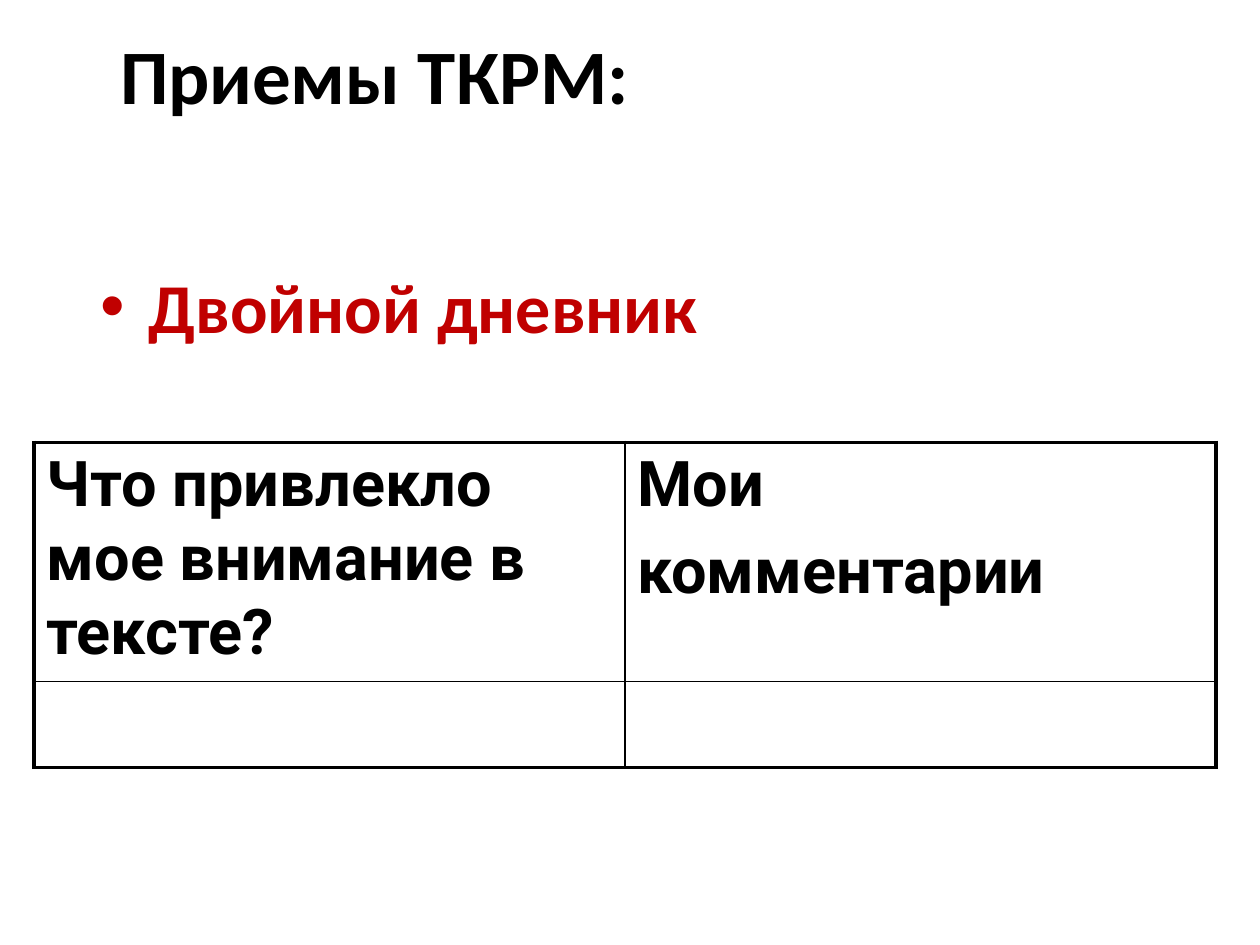
from lxml import etree
from pptx import Presentation
from pptx.dml.color import RGBColor
from pptx.enum.text import MSO_ANCHOR, PP_ALIGN
from pptx.oxml.ns import qn
from pptx.util import Inches, Pt


def add_run(para, text, size, font, color="000000"):
    span = para.add_run()
    span.text = text
    span.font.size = Pt(size)
    span.font.name = font
    span.font.bold = True
    span.font.color.rgb = RGBColor.from_string(color)


def set_borders(cell, widths):
    """Draw black left, right, top and bottom borders, widths in points."""
    props = cell._tc.get_or_add_tcPr()
    for index, (side, width) in enumerate(zip("LRTB", widths)):
        line = etree.Element(qn(f"a:ln{side}"), w=str(Pt(width)))
        fill = etree.SubElement(line, qn("a:solidFill"))
        etree.SubElement(fill, qn("a:srgbClr"), val="000000")
        props.insert(index, line)


deck = Presentation()
deck.slide_width, deck.slide_height = Inches(10), Inches(7.5)
page = deck.slides.add_slide(deck.slide_layouts[5])

# Title
title = page.shapes.title
title.left, title.top = Inches(-0.23), Inches(0)
title.width, title.height = Inches(6.41), Inches(1.17)
title.text_frame.vertical_anchor = MSO_ANCHOR.MIDDLE
para = title.text_frame.paragraphs[0]
para.alignment = PP_ALIGN.CENTER
add_run(para, "Приемы ТКРМ:", 44, "Calibri")

# Name of the technique
box = page.shapes.add_textbox(Inches(0.7), Inches(1.64), Inches(7.99), Inches(1.34))
frame = box.text_frame
frame.word_wrap = True
frame.margin_top = Inches(0.58)
para = frame.paragraphs[0]
props = para._p.get_or_add_pPr()
props.set("marL", str(Inches(0.38)))
props.set("indent", str(Inches(-0.38)))
etree.SubElement(props, qn("a:buFont"), typeface="Arial")
etree.SubElement(props, qn("a:buChar"), char="•")
para.line_spacing = 0.8
add_run(para, "Двойной дневник", 40, "Calibri", "C00000")

# Double diary
rows = [
    [["Что привлекло мое внимание в тексте?"], ["Мои", "комментарии"]],
    [[], []],
]
row_heights = [1.86, 0.68]
column_width = 4.69
outer, inner = 2.25, 1
diary = page.shapes.add_table(
    2, 2, Inches(0.27), Inches(3.51), Inches(2 * column_width), Inches(sum(row_heights))
).table
for column in diary.columns:
    column.width = Inches(column_width)
for r, row in enumerate(rows):
    diary.rows[r].height = Inches(row_heights[r])
    for c, lines in enumerate(row):
        cell = diary.cell(r, c)
        cell.fill.background()
        set_borders(cell, [
            outer if c == 0 else inner,
            outer if c == 1 else inner,
            outer if r == 0 else inner,
            outer if r == 1 else inner,
        ])
        for i, text in enumerate(lines):
            if i == 0:
                para = cell.text_frame.paragraphs[0]
            else:
                para = cell.text_frame.add_paragraph()
                para.space_before = Pt(7.2)
            add_run(para, text, 36, "Roboto")

deck.save("out.pptx")
